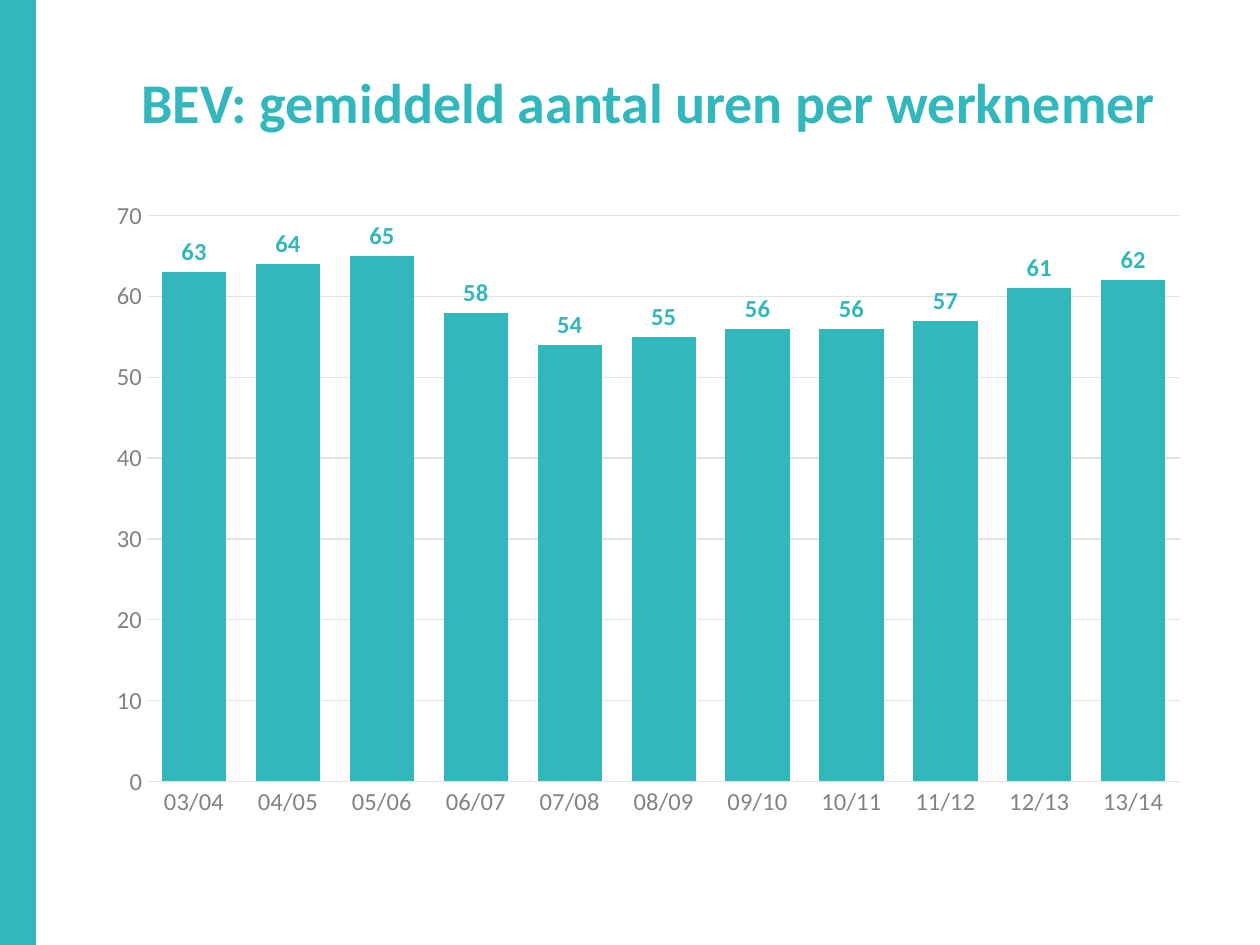
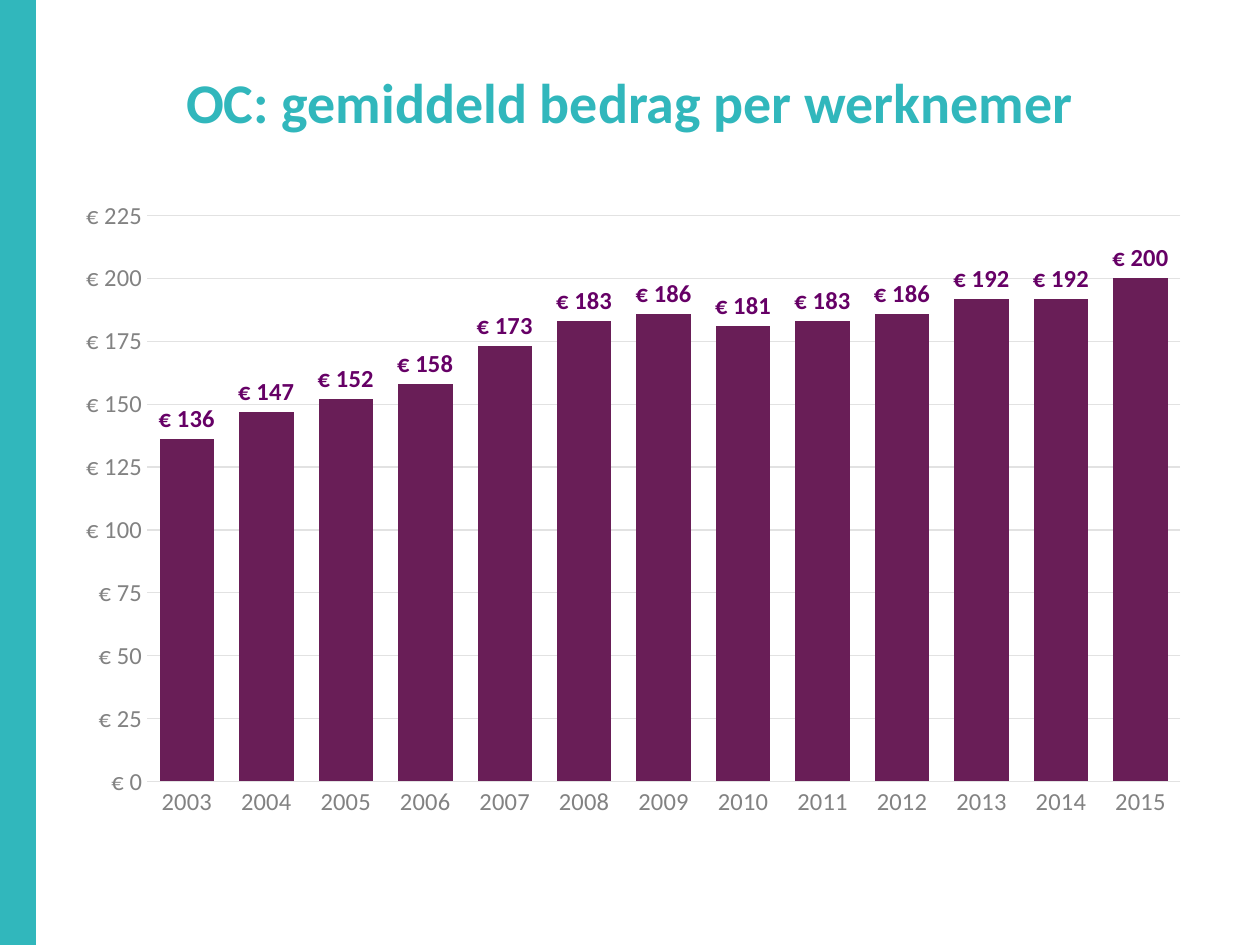
from lxml import etree
from pptx import Presentation
from pptx.chart.data import CategoryChartData
from pptx.dml.color import RGBColor
from pptx.enum.chart import XL_CHART_TYPE, XL_LABEL_POSITION, XL_TICK_MARK
from pptx.enum.shapes import MSO_SHAPE
from pptx.enum.text import MSO_ANCHOR, PP_ALIGN
from pptx.oxml.ns import qn
from pptx.util import Inches, Pt

TEAL = RGBColor(0x31, 0xB7, 0xBC)
PLUM = RGBColor(0x69, 0x1E, 0x57)
PURPLE = RGBColor(0x66, 0x00, 0x66)
AXIS_GREY = RGBColor(0x82, 0x82, 0x82)
GRID_GREY = RGBColor(0xE2, 0xE2, 0xE2)
TEXT_GREY = RGBColor(0x3F, 0x3F, 0x3F)
FONT = "Calibri"
PLOT_SHARES = {"x": 0.072, "y": 0.068, "w": 0.911, "h": 0.846}

STATISTICS = [
    dict(
        title="BEV: gemiddeld aantal uren per werknemer",
        title_width=9.3,
        periods=[f"{year:02}/{year + 1:02}" for year in range(3, 14)],
        averages=[63, 64, 65, 58, 54, 55, 56, 56, 57, 61, 62],
        top=70, step=10, number_format="#,##0",
        bar_color=TEAL, label_color=TEAL,
    ),
    dict(
        title="OC: gemiddeld bedrag per werknemer",
        title_width=9,
        periods=[str(year) for year in range(2003, 2016)],
        averages=[136, 147, 152, 158, 173, 183, 186, 181, 183, 186, 192, 192, 200],
        top=225, step=25, number_format='"€"\\ #,##0',
        bar_color=PLUM, label_color=PURPLE,
    ),
]


def set_font(font, size, color, bold=False):
    font.name = FONT
    font.size = Pt(size)
    font.color.rgb = color
    font.bold = bold


def fix_plot_area(chart):
    """Place the inner plot area at fixed shares of the chart frame."""
    plot_area = chart._chartSpace.chart.plotArea
    for automatic in plot_area.findall(qn("c:layout")):
        plot_area.remove(automatic)
    layout = etree.Element(qn("c:layout"))
    manual = etree.SubElement(layout, qn("c:manualLayout"))
    settings = {"layoutTarget": "inner", "xMode": "edge", "yMode": "edge", **PLOT_SHARES}
    for tag, value in settings.items():
        etree.SubElement(manual, qn(f"c:{tag}")).set("val", str(value))
    plot_area.insert(0, layout)


prs = Presentation()
prs.slide_width, prs.slide_height = Inches(10), Inches(7.5)
title_only = prs.slide_layouts[5]

for statistic in STATISTICS:
    slide = prs.slides.add_slide(title_only)

    band = slide.shapes.add_shape(MSO_SHAPE.RECTANGLE, 0, 0, Inches(0.28), prs.slide_height)
    band.shadow.inherit = False
    band.fill.solid()
    band.fill.fore_color.rgb = TEAL
    band.line.color.rgb = TEAL
    band.line.width = Pt(0.75)

    title = slide.shapes.title
    title.left, title.top = Inches(0.5), Inches(0.3)
    title.width, title.height = Inches(statistic["title_width"]), Inches(1.01)
    title.text_frame.text = statistic["title"]
    title.text_frame.vertical_anchor = MSO_ANCHOR.MIDDLE
    heading = title.text_frame.paragraphs[0]
    heading.alignment = PP_ALIGN.CENTER
    set_font(heading.font, 32, TEAL, bold=True)

    chart_data = CategoryChartData()
    chart_data.categories = statistic["periods"]
    chart_data.add_series("Series 1", statistic["averages"])
    chart = slide.shapes.add_chart(
        XL_CHART_TYPE.COLUMN_CLUSTERED,
        Inches(0.52), Inches(1.35), Inches(9), Inches(5.31), chart_data,
    ).chart
    chart.has_legend = False
    chart.has_title = False
    set_font(chart.font, 14, TEXT_GREY)
    fix_plot_area(chart)

    for axis in (chart.category_axis, chart.value_axis):
        axis.major_tick_mark = axis.minor_tick_mark = XL_TICK_MARK.NONE
        set_font(axis.tick_labels.font, 14, AXIS_GREY)
    amounts = chart.value_axis
    amounts.minimum_scale, amounts.maximum_scale = 0, statistic["top"]
    amounts.major_unit = statistic["step"]
    amounts.format.line.fill.background()
    for line in (chart.category_axis.format.line, amounts.major_gridlines.format.line):
        line.color.rgb = GRID_GREY
        line.width = Pt(0.75)

    bars = chart.plots[0]
    bars.gap_width, bars.overlap = 46, -27
    bars.vary_by_categories = False
    series = bars.series[0]
    series.format.fill.solid()
    series.format.fill.fore_color.rgb = statistic["bar_color"]

    labels = series.data_labels
    labels.show_value = True
    labels.position = XL_LABEL_POSITION.OUTSIDE_END
    set_font(labels.font, 14, statistic["label_color"], bold=True)
    for numbers in (labels, amounts.tick_labels):
        numbers.number_format = statistic["number_format"]
        numbers.number_format_is_linked = False

prs.save("out.pptx")
